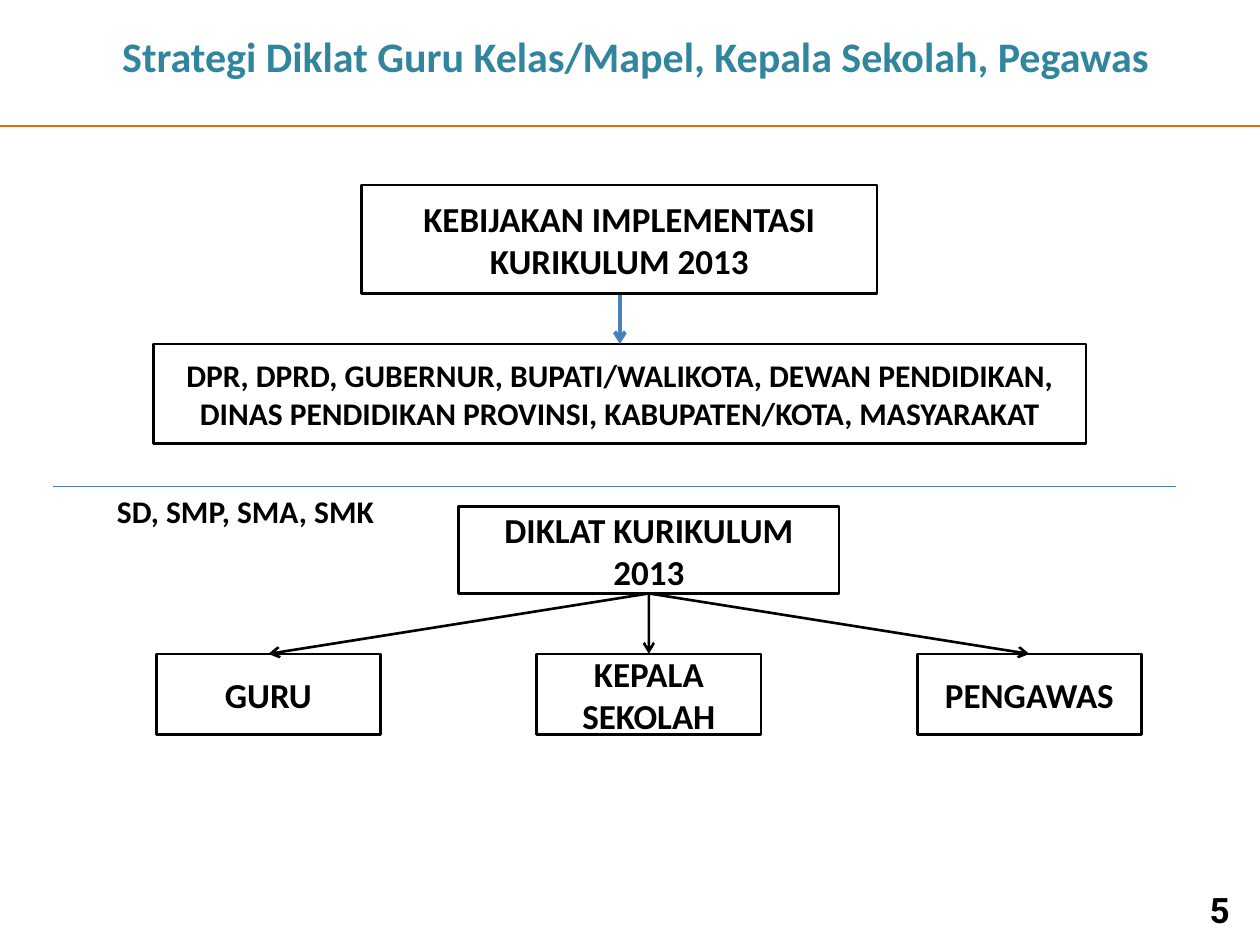
from pptx import Presentation
from pptx import util as u
from pptx.dml.color import RGBColor
from pptx.enum import shapes, text
from pptx.oxml.ns import qn
from lxml import etree

BLACK = RGBColor(0x00, 0x00, 0x00)
TEAL = RGBColor(0x31, 0x85, 0x9C)
BLUE = RGBColor(0x4B, 0x7E, 0xBC)
ORANGE = RGBColor(0xE4, 0x6C, 0x0A)
CENTER, LEFT = text.PP_ALIGN.CENTER, text.PP_ALIGN.LEFT
MIDDLE, TOP = text.MSO_ANCHOR.MIDDLE, text.MSO_ANCHOR.TOP


class Diagram:
    font = "Calibri"
    line_width = 1.5

    def __init__(self, slide):
        self.shapes = slide.shapes

    def set_text(self, sp, lines, size, color=BLACK, font=None, align=CENTER,
                 anchor=MIDDLE, wrap=True):
        tf = sp.text_frame
        tf.word_wrap = wrap
        tf.vertical_anchor = anchor
        style = {"name": font or self.font, "size": u.Pt(size), "bold": True}
        for i, line in enumerate(lines.split("\n")):
            p = tf.add_paragraph() if i else tf.paragraphs[0]
            p.alignment = align
            r = p.add_run()
            r.text = line
            for name, value in style.items():
                setattr(r.font, name, value)
            r.font.color.rgb = color

    def label(self, at, lines, size, **style):
        sp = self.shapes.add_textbox(*map(u.Inches, at))
        self.set_text(sp, lines, size, **style)

    def box(self, at, lines, size=20):
        sp = self.shapes.add_shape(shapes.MSO_SHAPE.RECTANGLE, *map(u.Inches, at))
        sp.shadow.inherit = False
        sp.fill.background()
        sp.line.color.rgb = BLACK
        sp.line.width = u.Pt(self.line_width)
        self.set_text(sp, lines, size)

    def line(self, start, end, color=BLACK, width=None, arrow=False):
        c = self.shapes.add_connector(shapes.MSO_CONNECTOR.STRAIGHT,
                                      *map(u.Inches, (*start, *end)))
        c.line.color.rgb = color
        c.line.width = u.Pt(width or self.line_width)
        properties = c.element.spPr
        if arrow:
            etree.SubElement(properties.find(qn("a:ln")), qn("a:tailEnd"), type="arrow")
        etree.SubElement(properties, qn("a:effectLst"))


def main():
    prs = Presentation()
    prs.slide_width, prs.slide_height = u.Inches(10), u.Inches(7.5)
    s = Diagram(prs.slides.add_slide(prs.slide_layouts[6]))

    s.line((0, 1), (10.05, 1), ORANGE)
    s.label((0.75, 0.13, 8.59, 0.63),
            "Strategi Diklat Guru Kelas/Mapel, Kepala Sekolah, Pegawas", 24, color=TEAL)
    s.label((9.28, 7.02, 0.8, 0.4), "5", 20, font="Roboto")

    # Policy and the bodies that carry it
    s.box((1.22, 2.73, 7.4, 0.79),
          "DPR, DPRD, GUBERNUR, BUPATI/WALIKOTA, DEWAN PENDIDIKAN, "
          "DINAS PENDIDIKAN PROVINSI, KABUPATEN/KOTA, MASYARAKAT", 18)
    s.line((4.92, 2.33), (4.92, 2.73), BLUE, 2.25, arrow=True)
    s.box((2.87, 1.47, 4.09, 0.86), "KEBIJAKAN IMPLEMENTASI KURIKULUM 2013")

    # Training and its three audiences
    s.line((0.42, 3.86), (9.33, 3.86), BLUE, 0.75)
    s.label((0.83, 3.86, 2.4, 0.33), "SD, SMP, SMA, SMK", 18,
            align=LEFT, anchor=TOP, wrap=False)
    s.box((3.64, 4.02, 3.02, 0.69), "DIKLAT KURIKULUM\n2013")
    width, top = 1.78, 5.19
    for i, audience in enumerate(("GURU", "KEPALA SEKOLAH", "PENGAWAS")):
        left = 1.24 + 3.02 * i
        s.box((left, top, width, 0.64), audience)
        s.line((5.15, 4.71), (left + width / 2, top), arrow=True)

    prs.save("out.pptx")


if __name__ == "__main__":
    main()
